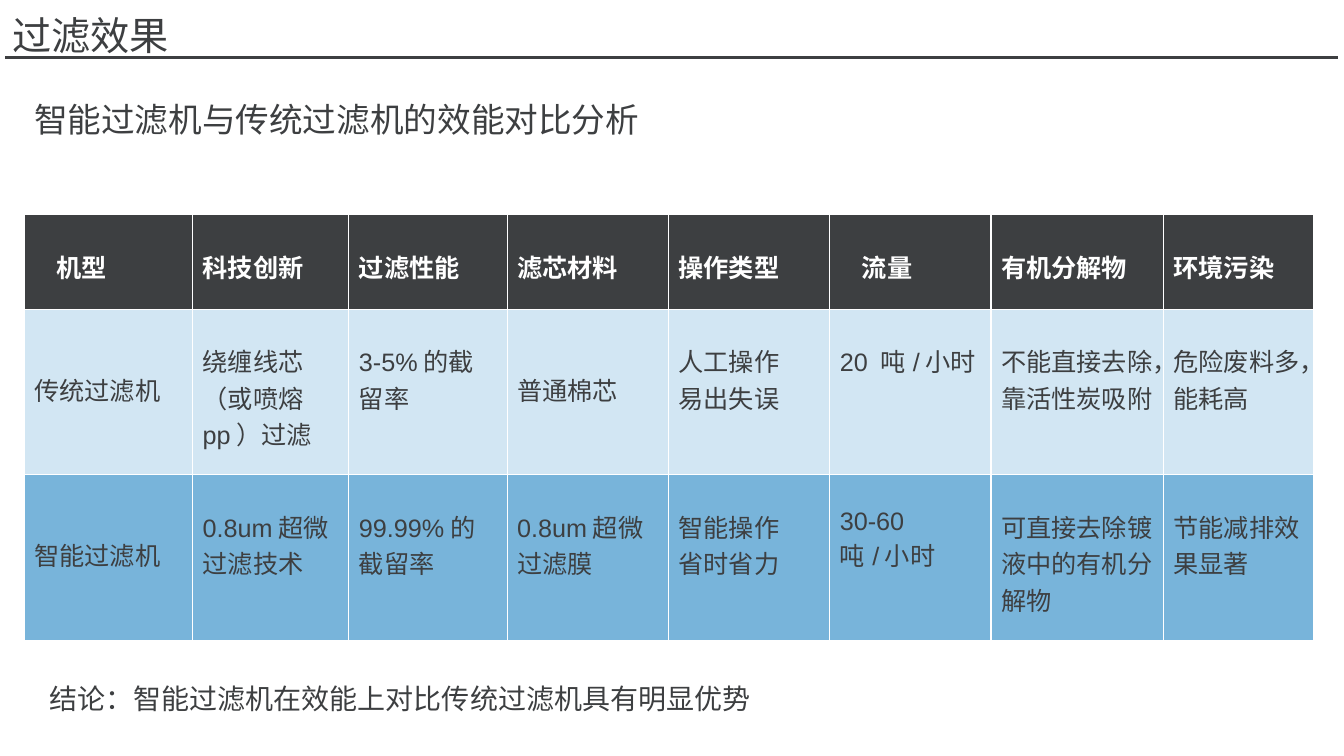
from pptx import Presentation
from pptx.dml.color import RGBColor
from pptx.enum.shapes import MSO_CONNECTOR
from pptx.enum.text import MSO_ANCHOR, MSO_AUTO_SIZE, PP_ALIGN
from pptx.oxml.ns import qn
from pptx.util import Inches, Pt
from lxml import etree

STRAIGHT = MSO_CONNECTOR.STRAIGHT
TOP, LEFT, NO_FIT = MSO_ANCHOR.TOP, PP_ALIGN.LEFT, MSO_AUTO_SIZE.NONE

FONT = "Arial"
DARK, WHITE = "3D3F41", "FFFFFF"
ROW_FILLS = [DARK, "D2E6F3", "78B4DA"]
COLUMN_WIDTHS = [1.67, 1.55, 1.57, 1.6, 1.6, 1.6, 1.71, 1.49]
ROW_HEIGHTS = [0.94, 1.64, 1.65]
LINE_DROP = 0.28  # height of one empty 18 pt line

# Each cell is a list of paragraphs split at the line break
COMPARISON = [
    ["机型", "科技创新", "过滤性能", "滤芯材料",
     "操作类型", "流量", "有机分解物", "环境污染"],
    ["传统过滤机", "绕缠线芯（或喷熔pp）过滤", "3-5%的截留率", "普通棉芯",
     "人工操作\n易出失误", "20 吨/小时", "不能直接去除，靠活性炭吸附", "危险废料多，能耗高"],
    ["智能过滤机", "0.8um超微过滤技术", "99.99%的截留率", "0.8um超微过滤膜",
     "智能操作\n省时省力", "30-60 吨/小时", "可直接去除镀液中的有机分解物", "节能减排效果显著"],
]
INDENTED_HEADINGS = {"机型", "流量"}
LOWERED_CELLS = {"传统过滤机", "普通棉芯", "智能过滤机"}


def colour(hex_text):
    return RGBColor.from_string(hex_text)


def write(frame, text, size, hex_text=DARK, bold=False):
    """Fill a text frame, one paragraph per line of text."""
    frame.word_wrap = True
    for index, line in enumerate(text.split("\n")):
        para = frame.add_paragraph() if index else frame.paragraphs[0]
        para.alignment = LEFT
        span = para.add_run()
        span.text = line
        span.font.name = FONT
        span.font.size = Pt(size)
        span.font.bold = bold
        span.font.color.rgb = colour(hex_text)


def add_heading(page, left, top, width, height):
    # Title
    title = page.shapes.title
    title.left, title.top = Inches(left), Inches(top)
    title.width, title.height = Inches(width), Inches(height)
    title.text_frame.auto_size = NO_FIT
    title.text_frame.vertical_anchor = TOP
    write(title.text_frame, "过滤效果", 28)

    # Rule under the title
    rule_y = Inches(top + 0.51)
    rule = page.shapes.add_connector(
        STRAIGHT, Inches(left + 0.03), rule_y, Inches(left + 13.25), rule_y)
    rule.line.color.rgb = colour(DARK)
    rule.line.width = Pt(2.25)
    etree.SubElement(rule.element.spPr, qn("a:effectLst"))


def add_statement(page, text, size, left, top, width, height):
    box = page.shapes.add_textbox(
        Inches(left), Inches(top), Inches(width), Inches(height))
    write(box.text_frame, text, size)


def add_comparison(page, left, top):
    frame = page.shapes.add_table(
        len(ROW_HEIGHTS), len(COLUMN_WIDTHS), Inches(left), Inches(top),
        Inches(sum(COLUMN_WIDTHS)), Inches(sum(ROW_HEIGHTS)))
    table = frame.table
    for column, width in zip(table.columns, COLUMN_WIDTHS):
        column.width = Inches(width)
    for row, height, fill, texts in zip(
            table.rows, ROW_HEIGHTS, ROW_FILLS, COMPARISON):
        row.height = Inches(height)
        is_header = fill == DARK
        for cell, text in zip(row.cells, texts):
            cell.fill.solid()
            cell.fill.fore_color.rgb = colour(fill)
            drop = LINE_DROP * (2 if text in LOWERED_CELLS else 1)
            cell.margin_top = Inches(0.05 + drop)
            cell.margin_left = Inches(0.32 if text in INDENTED_HEADINGS else 0.1)
            cell.vertical_anchor = TOP
            write(cell.text_frame, text, 18,
                  WHITE if is_header else DARK, is_header)


def main():
    deck = Presentation()
    deck.slide_width, deck.slide_height = Inches(13.33), Inches(7.5)
    page = deck.slides.add_slide(deck.slide_layouts[5])
    add_heading(page, 0.02, 0.06, 1.9, 0.57)
    add_statement(page, "智能过滤机与传统过滤机的效能对比分析", 24,
                  0.24, 0.93, 7.23, 0.5)
    add_comparison(page, 0.24, 2.13)
    add_statement(page, "结论：智能过滤机在效能上对比传统过滤机具有明显优势", 20,
                  0.39, 6.71, 7.28, 0.44)
    deck.save("out.pptx")


if __name__ == "__main__":
    main()
